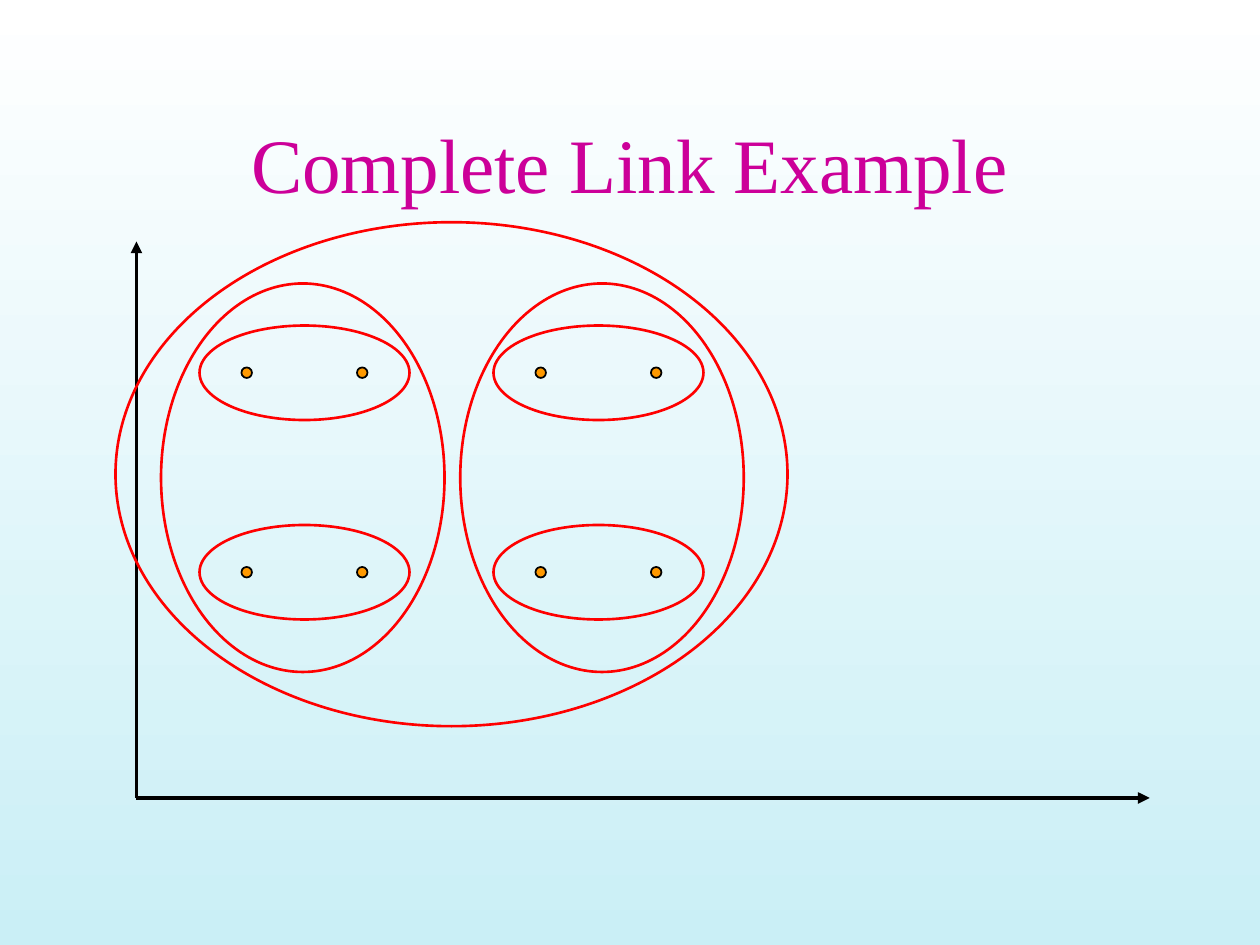
from dataclasses import dataclass
from itertools import product

from lxml.etree import SubElement
from pptx import Presentation
from pptx.dml.color import RGBColor
from pptx.enum.shapes import MSO_CONNECTOR, MSO_SHAPE
from pptx.enum.text import MSO_ANCHOR, PP_ALIGN
from pptx.oxml.ns import qn
from pptx.util import Pt


@dataclass(frozen=True)
class Theme:
    font: str = "Times New Roman"
    title_size: float = 44
    title: RGBColor = RGBColor(0xCC, 0x00, 0x99)
    axis: RGBColor = RGBColor(0x00, 0x00, 0x00)
    point: RGBColor = RGBColor(0xFF, 0x99, 0x00)
    cluster: RGBColor = RGBColor(0xFF, 0x00, 0x00)
    sky_top: RGBColor = RGBColor(0xFF, 0xFF, 0xFF)
    sky_bottom: RGBColor = RGBColor(0xCA, 0xEF, 0xF6)


THEME = Theme()

# Places in points
ORIGIN = (78, 456)
PAIR_LEFTS, PAIR_TOPS = (114, 282), (186, 300)
PAIR_SIZE = (120, 54)
POINT_OFFSETS, POINT_TOP, POINT_SIZE = (24, 90), 24, 6
GROUP_LEFTS, GROUP_TOP, GROUP_SIZE = (92, 263), 162, (162, 222)


def paint_background(page):
    fill = page.background.fill
    fill.gradient()
    fill.gradient_angle = 270
    for stop, color in zip(fill.gradient_stops, (THEME.sky_top, THEME.sky_bottom)):
        stop.color.rgb = color


def add_title(page, text):
    box = page.shapes.add_textbox(Pt(54), Pt(48), Pt(612), Pt(90))
    frame = box.text_frame
    frame.word_wrap = True
    frame.vertical_anchor = MSO_ANCHOR.MIDDLE
    frame.text = text
    para = frame.paragraphs[0]
    para.alignment = PP_ALIGN.CENTER
    span = para.runs[0]
    span.font.name = THEME.font
    span.font.size = Pt(THEME.title_size)
    span.font.color.rgb = THEME.title


def add_axis(page, end):
    axis = page.shapes.add_connector(
        MSO_CONNECTOR.STRAIGHT, *(Pt(value) for value in (*ORIGIN, *end)))
    axis.line.color.rgb = THEME.axis
    axis.line.width = Pt(2.25)
    # Arrowhead at the far end, no shadow
    SubElement(axis.line._get_or_add_ln(), qn("a:tailEnd"), type="triangle")
    SubElement(axis._element.spPr, qn("a:effectLst"))


def add_ellipse(page, left, top, width, height, line, weight, fill=None):
    ellipse = page.shapes.add_shape(
        MSO_SHAPE.OVAL, Pt(left), Pt(top), Pt(width), Pt(height))
    ellipse.shadow.inherit = False
    ellipse.line.color.rgb = line
    ellipse.line.width = Pt(weight)
    if fill is None:
        ellipse.fill.background()
    else:
        ellipse.fill.solid()
        ellipse.fill.fore_color.rgb = fill


def add_cluster(page, left, top, size):
    add_ellipse(page, left, top, *size, THEME.cluster, 1.5)


def add_pair(page, left, top):
    for offset in POINT_OFFSETS:
        add_ellipse(page, left + offset, top + POINT_TOP, POINT_SIZE, POINT_SIZE,
                    THEME.axis, 1, THEME.point)
    add_cluster(page, left, top, PAIR_SIZE)


def main():
    deck = Presentation()
    deck.slide_width, deck.slide_height = Pt(720), Pt(540)
    page = deck.slides.add_slide(deck.slide_layouts[6])
    paint_background(page)
    add_title(page, "Complete Link Example")

    # Vertical and horizontal axes
    for end in ((ORIGIN[0], 138), (657, ORIGIN[1])):
        add_axis(page, end)

    # Nested clusters: four pairs, two groups, one whole
    for left, top in product(PAIR_LEFTS, PAIR_TOPS):
        add_pair(page, left, top)
    for left in GROUP_LEFTS:
        add_cluster(page, left, GROUP_TOP, GROUP_SIZE)
    add_cluster(page, 66, 127, (384, 288))

    deck.save("out.pptx")


if __name__ == "__main__":
    main()
